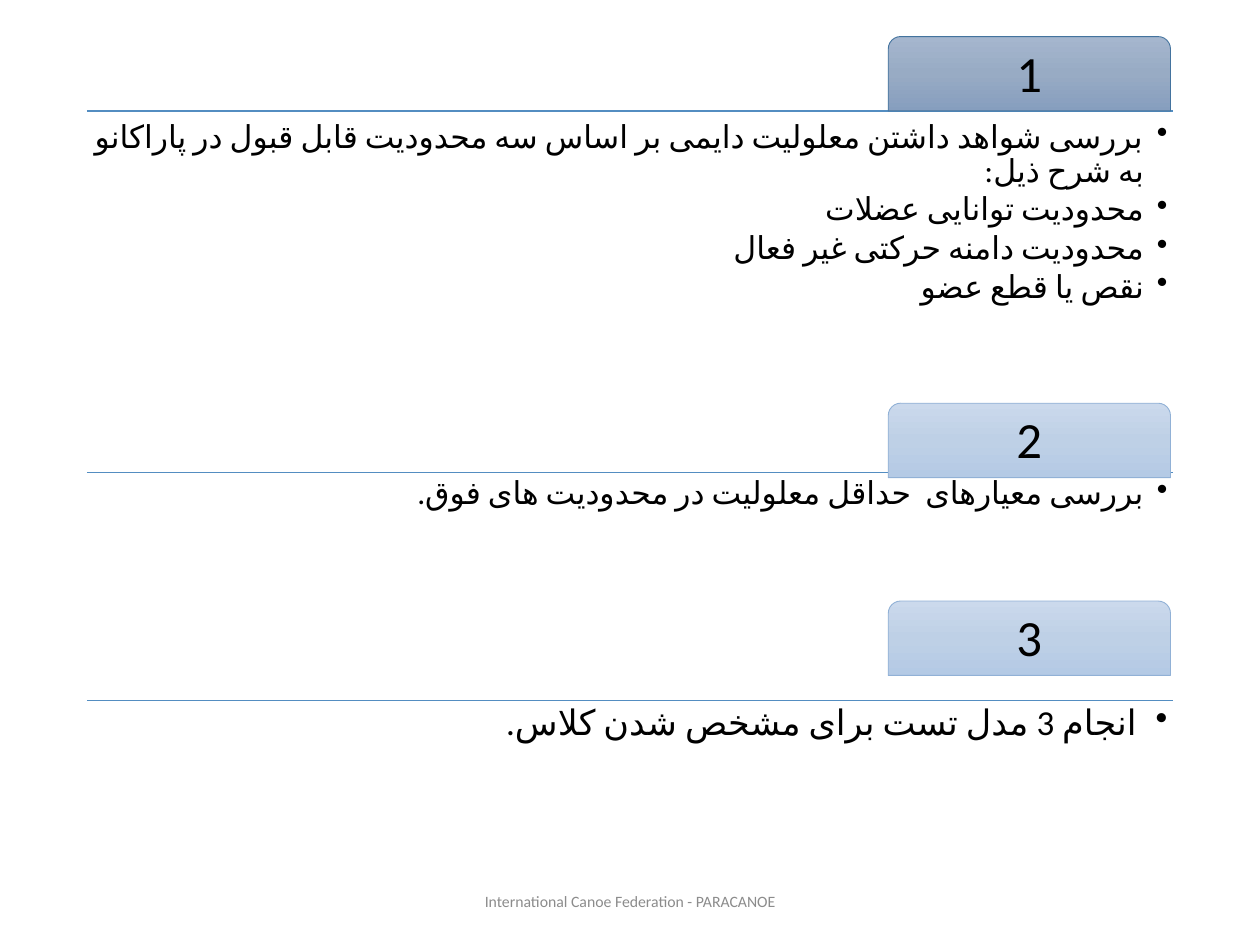
from copy import deepcopy
from dataclasses import dataclass

from lxml.etree import SubElement
from pptx import Presentation
from pptx.dml.color import RGBColor as Rgb
from pptx.enum.lang import MSO_LANGUAGE_ID as Lang
from pptx.enum.shapes import MSO_CONNECTOR as Conn, MSO_SHAPE as Geo
from pptx.enum.text import MSO_ANCHOR as Anchor, PP_ALIGN as Align
from pptx.oxml.ns import qn
from pptx.util import Inches, Pt


@dataclass
class Theme:
    face: str = "Calibri"
    ink: str = "000000"
    gray: str = "8C8C8C"
    rule: str = "538DC1"
    dark: tuple = ("A5B6CE", "98ABC4", "869EBE")
    light: tuple = ("CBD9EC", "BED0E6", "B4CAE5")
    dark_edge: str = "43739E"
    light_edge: str = "91B1D6"
    num: int = 29
    note: int = 9


theme = Theme()


def set_frame(frame, pad, anchor):
    form = {"word_wrap": True, "vertical_anchor": anchor}
    for side in ("left", "top", "right", "bottom"):
        form["margin_" + side] = Inches(pad)
    for key, val in form.items():
        setattr(frame, key, val)


def set_text(para, text, size, color, align, lang=Lang.ENGLISH_US):
    run = para.add_run()
    run.text = text
    para.alignment = align
    form = {"name": theme.face, "size": Pt(size), "language_id": lang}
    for key, val in form.items():
        setattr(run.font, key, val)
    run.font.color.rgb = Rgb.from_string(color)
    SubElement(run.font._element, qn("a:cs"), typeface=theme.face)


# Each step: tab top, rule, body top, body height, text size, indent,
# tab fill, tab edge, points
steps = [
    (0.29, 0.88, 0.92, 2.24, 18, 0.19, theme.dark, theme.dark_edge, [
        "بررسی شواهد داشتن معلولیت دایمی بر اساس سه محدودیت قابل قبول در پاراکانو به شرح ذیل:",
        "محدودیت توانایی عضلات",
        "محدودیت دامنه حرکتی غیر فعال",
        "نقص یا قطع عضو",
    ]),
    (3.2, 3.75, 3.75, 1.19, 18, 0.19, theme.light, theme.light_edge, [
        "بررسی معیارهای  حداقل معلولیت در محدودیت های فوق.",
    ]),
    (4.77, 5.56, 5.56, 1.19, 20, 0.25, theme.light, theme.light_edge, [
        "انجام 3 مدل تست برای مشخص شدن کلاس.",
    ]),
]
left, wide = 0.69, 8.62

deck = Presentation()
deck.slide_width, deck.slide_height = Inches(10), Inches(7.5)
shapes = deck.slides.add_slide(deck.slide_layouts[6]).shapes

# Rules, behind the tabs
for step in steps:
    y = Inches(step[1])
    rule = shapes.add_connector(Conn.STRAIGHT, Inches(left), y,
                                Inches(left + wide), y)
    rule.line.width = Pt(1)
    rule.line.color.rgb = Rgb.from_string(theme.rule)
    SubElement(rule._element.spPr, qn("a:effectLst"))

for num, step in enumerate(steps, 1):
    top, _, body_top, tall, size, indent, fill, edge, points = step

    # Numbered tab
    tab = shapes.add_shape(Geo.ROUND_2_SAME_RECTANGLE, Inches(7.05),
                           Inches(top), Inches(2.24), Inches(0.59))
    tab.shadow.inherit = False
    tab.fill.gradient()
    tab.fill.gradient_angle = 270
    stops = tab._element.spPr.find(".//" + qn("a:gsLst"))
    stops.insert(1, deepcopy(stops[0]))
    for stop, color, pos in zip(tab.fill.gradient_stops, fill, (0, 0.5, 1)):
        stop.color.rgb = Rgb.from_string(color)
        stop.position = pos
    tab.line.width = Pt(0.5)
    tab.line.color.rgb = Rgb.from_string(edge)
    set_frame(tab.text_frame, 0.06, Anchor.MIDDLE)
    para = tab.text_frame.paragraphs[0]
    set_text(para, str(num), theme.num, theme.ink, Align.CENTER)
    para.line_spacing = 0.9

    # Right-to-left bullets
    frame = shapes.add_textbox(Inches(left), Inches(body_top), Inches(wide),
                               Inches(tall)).text_frame
    set_frame(frame, 0.04, Anchor.TOP)
    for i, point in enumerate(points):
        para = frame.add_paragraph() if i else frame.paragraphs[0]
        props = para._p.get_or_add_pPr()
        gap = Inches(indent)
        for key, val in {"marL": gap, "indent": -gap, "rtl": 1}.items():
            props.set(key, str(int(val)))
        SubElement(props, qn("a:buChar"), char="•")
        form = {"level": 1, "line_spacing": 0.9,
                "space_after": Pt(0.15 * size)}
        for key, val in form.items():
            setattr(para, key, val)
        set_text(para, point, size, theme.ink, Align.RIGHT, Lang.FARSI)

# Footer
frame = shapes.add_textbox(Inches(3.31), Inches(6.95), Inches(3.38),
                           Inches(0.4)).text_frame
set_frame(frame, 0.05, Anchor.MIDDLE)
set_text(frame.paragraphs[0], "International Canoe Federation - PARACANOE",
         theme.note, theme.gray, Align.CENTER)

deck.save("out.pptx")
